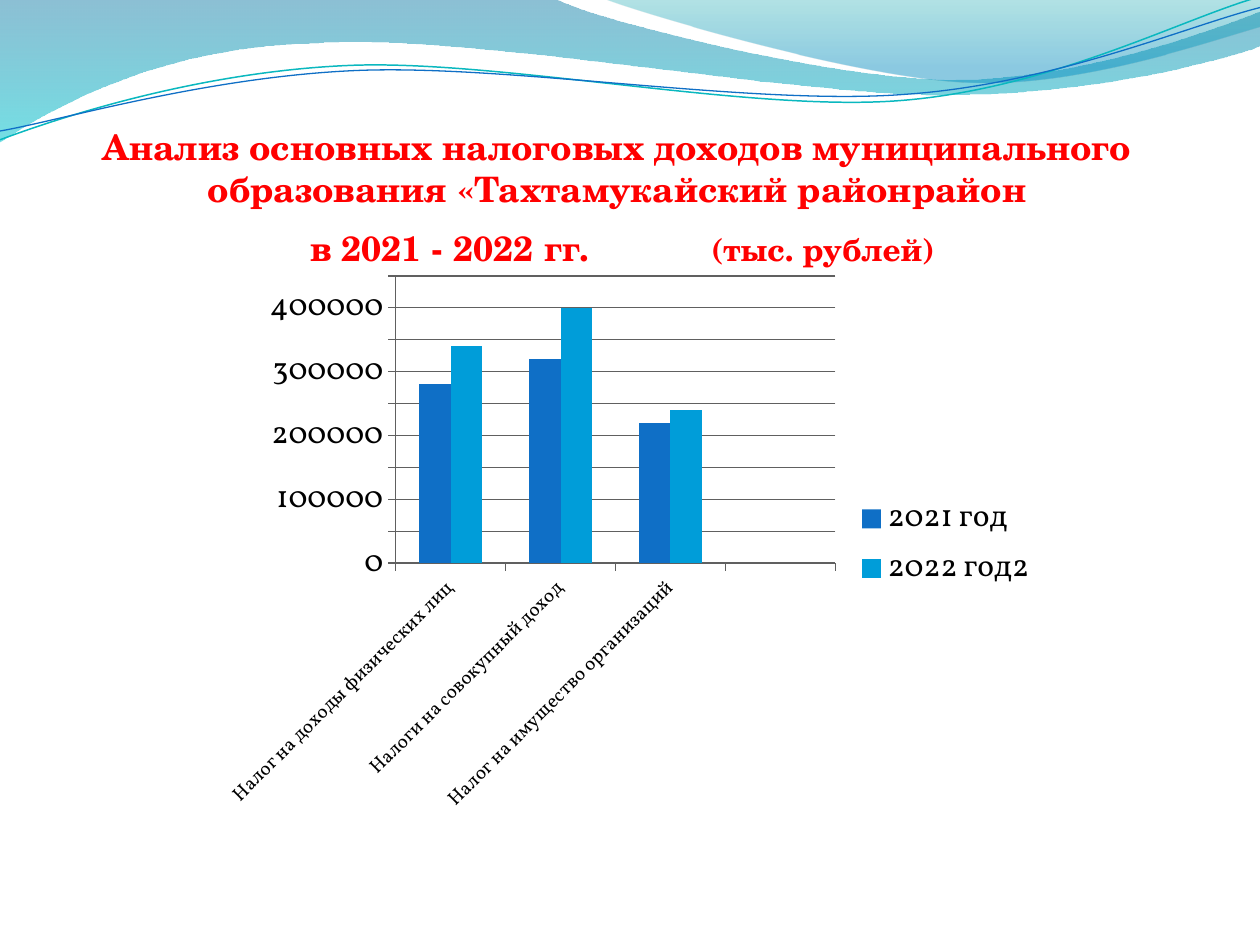
from lxml import etree
from pptx import Presentation
from pptx.chart import data
from pptx.dml.color import RGBColor
from pptx.enum import chart as ch, text
from pptx.oxml import ns, parse_xml
from pptx.util import Inches, Pt

RED = RGBColor(0xFF, 0x00, 0x00)
BLACK = RGBColor(0x00, 0x00, 0x00)
GRAY = RGBColor(0x60, 0x60, 0x60)
BLUE = RGBColor(0x0F, 0x6F, 0xC6)
SKY = RGBColor(0x00, 0x9D, 0xD9)
AQUA = RGBColor(0x0A, 0xB8, 0xBF)
DEEP = RGBColor(0x00, 0x74, 0xA1)
TURQUOISE = RGBColor(0x00, 0xC6, 0xCF)
TEAL = RGBColor(0x00, 0xA1, 0xA9)
AZURE = RGBColor(0x00, 0x8B, 0xBF)
CHART_X, CHART_Y, CHART_W, CHART_H = 1.67, 2.1, 6.67, 4.44


def add_curve(s, start, segments, close):
    fb = s.shapes.build_freeform(Inches(start[0]), Inches(start[1]))
    fb.add_line_segments([(Inches(g[-2]), Inches(g[-1])) for g in segments], close=close)
    sp = fb.convert_to_shape()
    sp.shadow.inherit = False
    for line, g in zip(list(sp._element.iter(ns.qn("a:lnTo"))), segments):
        if len(g) == 6:
            bez = etree.Element(ns.qn("a:cubicBezTo"))
            for x, y in zip(g[::2], g[1::2]):
                etree.SubElement(bez, ns.qn("a:pt"), x=str(Inches(x) - sp.left),
                                 y=str(Inches(y) - sp.top))
            line.getparent().replace(line, bez)
    return sp


def set_layout(parent, x, y, w, h, inner=False):
    for old in parent.findall(ns.qn("c:layout")):
        parent.remove(old)
    target = '<c:layoutTarget val="inner"/>' if inner else ""
    shares = ((x - CHART_X) / CHART_W, (y - CHART_Y) / CHART_H, w / CHART_W, h / CHART_H)
    sizes = "".join(f'<c:{n} val="{v:.4f}"/>' for n, v in zip("xywh", shares))
    layout = parse_xml(
        f'<c:layout {ns.nsdecls("c")}><c:manualLayout>{target}'
        f'<c:xMode val="edge"/><c:yMode val="edge"/>{sizes}</c:manualLayout></c:layout>')
    parent.insert(0 if inner else 1, layout)


prs = Presentation()
prs.slide_width, prs.slide_height = Inches(10), Inches(7.5)
s = prs.slides.add_slide(prs.slide_layouts[5])

waves = [
    ((0, 0), [(4.4, -0.01), (4.76, 0.17, 6.64, 0.63, 7.58, 0.63),
              (8.53, 0.63, 9.58, 0.26, 10, 0.09), (10.01, 0.36),
              (9.83, 0.44, 8.7, 0.76, 7.46, 0.75), (6.22, 0.75, 3.82, 0.28, 2.57, 0.34),
              (1.29, 0.36, 0.46, 0.83, -0.01, 1.13)],
     [(0, DEEP, 45), (1, TURQUOISE, 55)]),
    ((4.79, -0.01), [(5.09, 0.11, 6.82, 0.62, 7.69, 0.65),
                     (8.56, 0.69, 9.61, 0.32, 10, 0.21), (10, 0)],
     [(0, TEAL, 30), (0.8, AZURE, 45)]),
]
for start, segments, stops in waves:
    sp = add_curve(s, start, segments, True)
    sp.line.fill.background()
    sp.fill.gradient()
    sp.fill.gradient_angle = 270
    for stop, (pos, color, alpha) in zip(sp.fill.gradient_stops, stops):
        stop.position = pos
        stop.color.rgb = color
    for clr, (pos, color, alpha) in zip(sp._element.spPr.iter(ns.qn("a:srgbClr")), stops):
        etree.SubElement(clr, ns.qn("a:alpha")).set("val", str(alpha * 1000))

ribbons = [
    ((0, 1.11), [(0.48, 0.93, 1.58, 0.57, 2.77, 0.52), (3.95, 0.47, 5.93, 0.89, 7.13, 0.8),
                 (8.33, 0.71, 9.38, 0.15, 9.98, -0.02)], AQUA, 0.85),
    ((0, 1.04), [(0.47, 0.96, 1.64, 0.61, 2.83, 0.56), (4.03, 0.51, 5.97, 0.84, 7.17, 0.75),
                 (8.36, 0.67, 9.41, 0.21, 10, 0.06)], BLUE, 0.75),
]
for start, segments, color, width in ribbons:
    sp = add_curve(s, start, segments, False)
    sp.fill.background()
    sp.line.color.rgb = color
    sp.line.width = Pt(width)

title = s.shapes.title
s.shapes._spTree.append(title._element)
title.left, title.top, title.width, title.height = map(Inches, (0.51, 0.68, 8.86, 1.48))
tf = title.text_frame
tf.word_wrap = True
tf.auto_size = text.MSO_AUTO_SIZE.NONE
tf.vertical_anchor = text.MSO_ANCHOR.BOTTOM
tf.margin_left = tf.margin_right = tf.margin_bottom = 0
tf.margin_top = Inches(0.05)
p = tf.paragraphs[0]
p.text = ("Анализ основных налоговых доходов муниципального \v"
          "образования «Тахтамукайский районрайон \v"
          "в 2021 - 2022 гг.")
p.alignment = text.PP_ALIGN.CENTER
gap, unit = p.add_run(), p.add_run()
gap.text = " "
unit.text = "(тыс. рублей)"
for r in p.runs:
    r.font.size = Pt(20)
    r.font.name = "TeX Gyre Schola"
    r.font.bold = True
    r.font.color.rgb = RED
gap.font.size = Pt(30)
gap._r.get_or_add_rPr().set("spc", "6100")
unit.font.size = Pt(18)
for br in p._p.findall(ns.qn("a:br")):
    etree.SubElement(br, ns.qn("a:rPr"), sz="2000", b="1")

cd = data.CategoryChartData()
cd.categories = ["Налог на доходы физических лиц", "Налоги на совокупный доход",
                 "Налог на имущество организаций", ""]
cd.add_series("2021 год", (280000, 320000, 220000, None))
cd.add_series("2022 год2", (340000, 400000, 240000, None))
chart = s.shapes.add_chart(ch.XL_CHART_TYPE.COLUMN_CLUSTERED, Inches(CHART_X), Inches(CHART_Y),
                           Inches(CHART_W), Inches(CHART_H), cd).chart
for cache in chart._chartSpace.findall(".//" + ns.qn("c:cat") + "//" + ns.qn("c:strCache")):
    cache.remove(cache.findall(ns.qn("c:pt"))[-1])
chart.has_title = False
chart.font.name = "Vollkorn"
chart.font.size = Pt(18)
chart.font.color.rgb = BLACK
plot = chart.plots[0]
plot.vary_by_categories = False
plot.gap_width = 150
plot.overlap = 0
for series, color in zip(plot.series, (BLUE, SKY)):
    series.format.fill.solid()
    series.format.fill.fore_color.rgb = color

cat, val = chart.category_axis, chart.value_axis
for axis in (cat, val):
    axis.major_tick_mark = ch.XL_TICK_MARK.OUTSIDE
    axis.format.line.color.rgb = GRAY
    axis.format.line.width = Pt(0.75)
cat.tick_labels.font.size = Pt(11)
cat._element.txPr.find(ns.qn("a:bodyPr")).set("rot", "-2700000")
val.minimum_scale, val.maximum_scale, val.major_unit = 0, 450000, 50000
val.tick_labels.number_format = "General"
val.tick_labels.number_format_is_linked = False
val.has_major_gridlines = True
val.major_gridlines.format.line.color.rgb = GRAY
val.major_gridlines.format.line.width = Pt(0.75)

chart.has_legend = True
chart.legend.position = ch.XL_LEGEND_POSITION.RIGHT
chart.legend.include_in_layout = False
set_layout(chart._chartSpace.chart.plotArea, 3.14, 2.19, 3.49, 2.28, inner=True)
set_layout(chart.legend._element, 6.77, 3.9, 1.47, 0.83)

prs.save("out.pptx")
